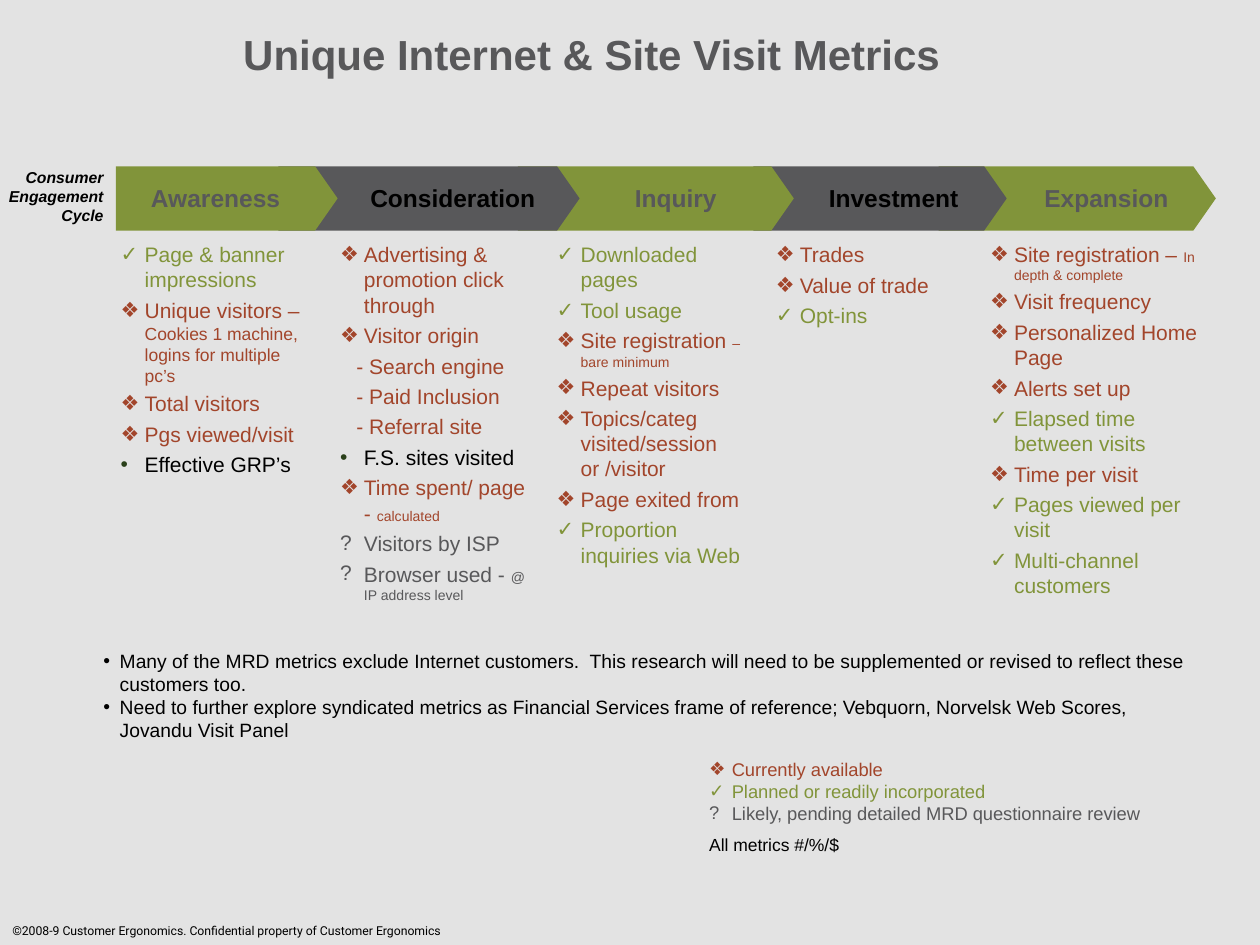
import lxml.etree
import pptx
import pptx.dml.color
import pptx.enum.shapes
import pptx.enum.text
import pptx.oxml.ns
import pptx.util

Inches, Pt = pptx.util.Inches, pptx.util.Pt
PP_ALIGN = pptx.enum.text.PP_ALIGN
ANCHOR = pptx.enum.text.MSO_ANCHOR

COLORS = {"background": "E3E3E3", "green": "81943A", "gray": "58585A",
          "rust": "A2452B", "black": "000000", "dark green": "2A401A"}

# kind: (bullet, text colour, bullet colour)
KINDS = {
    "available": ("❖", "rust", "rust"),
    "planned": ("✓", "green", "green"),
    "likely": ("?", "gray", "gray"),
    "other": ("•", "black", "dark green"),
    "note": ("•", "black", "black"),
    "detail": (None, "rust", None),
    "plain": (None, None, None),
}

TITLE = "Unique Internet & Site Visit Metrics"
CYCLE = "Consumer Engagement Cycle"
COPYRIGHT = "©2008-9 Customer Ergonomics. Confidential property of Customer Ergonomics"
UNITS = "All metrics #/%/$"

# name, arrow (left, width), label (left, width), list (left, width),
# metrics (kind, text[, small text, small size])
STAGES = [
    ("Awareness", (0.92, 1.76), (1.1, 1.24), (0.86, 1.72), [
        ("planned", "Page & banner impressions"),
        ("available", "Unique visitors – ", "Cookies 1 machine, logins for multiple pc’s", 10),
        ("available", "Total visitors"),
        ("available", "Pgs viewed/visit"),
        ("other", "Effective GRP’s")]),
    ("Consideration", (2.21, 2.39), (2.84, 1.52), (2.6, 1.72), [
        ("available", "Advertising & promotion click through"),
        ("available", "Visitor origin"),
        ("detail", "- Search engine"),
        ("detail", "- Paid Inclusion"),
        ("detail", "- Referral site"),
        ("other", "F.S. sites visited"),
        ("available", "Time spent/ page - ", "calculated", 8),
        ("likely", "Visitors by ISP"),
        ("likely", "Browser used - ", "@ IP address level", 8)]),
    ("Inquiry", (4.11, 2.19), (4.94, 0.86), (4.32, 1.72), [
        ("planned", "Downloaded pages"),
        ("planned", "Tool usage"),
        ("available", "Site registration ", "– bare minimum", 8),
        ("available", "Repeat visitors"),
        ("available", "Topics/categ visited/session or /visitor"),
        ("available", "Page exited from"),
        ("planned", "Proportion inquiries via Web")]),
    ("Investment", (5.98, 2.01), (6.48, 1.24), (6.06, 1.72), [
        ("available", "Trades"),
        ("available", "Value of trade"),
        ("planned", "Opt-ins")]),
    ("Expansion", (7.45, 2.2), (8.19, 1.19), (7.76, 1.94), [
        ("available", "Site registration – ", "In depth & complete", 8),
        ("available", "Visit frequency"),
        ("available", "Personalized Home Page"),
        ("available", "Alerts set up"),
        ("planned", "Elapsed time between visits"),
        ("available", "Time per visit"),
        ("planned", "Pages viewed per visit"),
        ("planned", "Multi-channel customers")]),
]
NOTES = [
    ("note", "Many of the MRD metrics exclude Internet customers.  This research will "
             "need to be supplemented or revised to reflect these customers too."),
    ("note", "Need to further explore syndicated metrics as Financial Services frame of "
             "reference; Vebquorn, Norvelsk Web Scores, Jovandu Visit Panel"),
]
LEGEND = [
    ("available", "Currently available"),
    ("planned", "Planned or readily incorporated"),
    ("likely", "Likely, pending detailed MRD questionnaire review"),
]


def rgb(name):
    return pptx.dml.color.RGBColor.from_string(COLORS[name])


def set_bullet(paragraph, char, color, indent):
    """Give the paragraph a hanging bullet, or a plain indent if char is None."""
    properties = paragraph._p.get_or_add_pPr()
    properties.set("marL", str(Inches(indent)))
    properties.set("indent", str(-Inches(indent) if char else 0))

    def add(parent, tag, **attributes):
        return lxml.etree.SubElement(parent, pptx.oxml.ns.qn(tag), attributes)

    if char:
        add(add(properties, "a:buClr"), "a:srgbClr", val=COLORS[color])
        add(properties, "a:buFont", typeface="Arial")
        add(properties, "a:buChar", char=char)
    else:
        add(properties, "a:buNone")


def write(shape, content, size, color="black", font="Arial", bold=False, italic=False,
          align=PP_ALIGN.LEFT, anchor=ANCHOR.TOP, wrap=True, indent=0, gap=0,
          line_spacing=1.0):
    """Fill a shape with a string or a list of (kind, text[, small text, small size])."""
    frame = shape.text_frame
    frame.auto_size = pptx.enum.text.MSO_AUTO_SIZE.NONE
    frame.word_wrap = wrap
    frame.vertical_anchor = anchor
    items = [("plain", content)] if isinstance(content, str) else content
    for i, (kind, text, *small) in enumerate(items):
        paragraph = frame.add_paragraph() if i else frame.paragraphs[0]
        paragraph.alignment = align
        paragraph.line_spacing = line_spacing
        paragraph.space_before = Pt(gap if i else 0)
        char, kind_color, bullet_color = KINDS[kind]
        set_bullet(paragraph, char, bullet_color, 0.13 if kind == "detail" else indent)
        for run_text, run_size in [(text, size)] + ([tuple(small)] if small else []):
            run = paragraph.add_run()
            run.text = run_text
            run.font.name = font
            run.font.size = Pt(run_size)
            run.font.bold = bold
            run.font.italic = italic
            run.font.color.rgb = rgb(kind_color or color)


def place(shape, left, top, width, height):
    shape.left, shape.top = Inches(left), Inches(top)
    shape.width, shape.height = Inches(width), Inches(height)
    return shape


def main():
    deck = pptx.Presentation()
    deck.slide_width, deck.slide_height = Inches(10), Inches(7.5)
    slide = deck.slides.add_slide(deck.slide_layouts[1])
    slide.background.fill.solid()
    slide.background.fill.fore_color.rgb = rgb("background")

    def text_box(left, top, width, height):
        return slide.shapes.add_textbox(*map(Inches, (left, top, width, height)))

    def filled_shape(preset, color, *box):
        shape = slide.shapes.add_shape(preset, *map(Inches, box))
        shape.shadow.inherit = False
        shape.fill.solid()
        shape.fill.fore_color.rgb = rgb(color)
        shape.line.fill.background()
        return shape

    title = place(slide.shapes.title, 1.83, 0, 8.17, 0.92)
    title.text_frame.margin_top = title.text_frame.margin_bottom = 0
    write(title, TITLE, 24, color="gray", bold=True, anchor=ANCHOR.MIDDLE, line_spacing=0.8)
    notes = place(slide.placeholders[1], 0.72, 5.1, 8.81, 0.84)
    write(notes, NOTES, 11, indent=0.13)

    write(text_box(0, 7.28, 3.9, 0.22), COPYRIGHT, 7, font="Roboto")
    write(text_box(-0.08, 1.28, 1, 0.56), CYCLE, 9, bold=True, italic=True,
          align=PP_ALIGN.RIGHT)

    # Right to left, so that each arrow's tip overlaps the next arrow
    for i, (_, (left, width), *_) in reversed(list(enumerate(STAGES))):
        arrow = filled_shape(pptx.enum.shapes.MSO_SHAPE.PENTAGON,
                             "gray" if i % 2 else "green", left, 1.32, width, 0.51)
        arrow.adjustments[0] = 0.35
    for i, (name, _, label, column, metrics) in enumerate(STAGES):
        write(text_box(label[0], 1.4, label[1], 0.34), name, 14, bold=True, wrap=False,
              color="black" if i % 2 else "gray")
        write(text_box(column[0], 1.87, column[1], 3.06), metrics, 12, indent=0.19, gap=3)

    legend = filled_shape(pptx.enum.shapes.MSO_SHAPE.RECTANGLE, "background",
                          5.53, 5.97, 3.72, 0.63)
    write(legend, LEGEND, 10.5, indent=0.18, wrap=False)
    write(text_box(5.53, 6.57, 1.25, 0.27), UNITS, 10, wrap=False)

    deck.save("out.pptx")


if __name__ == "__main__":
    main()
